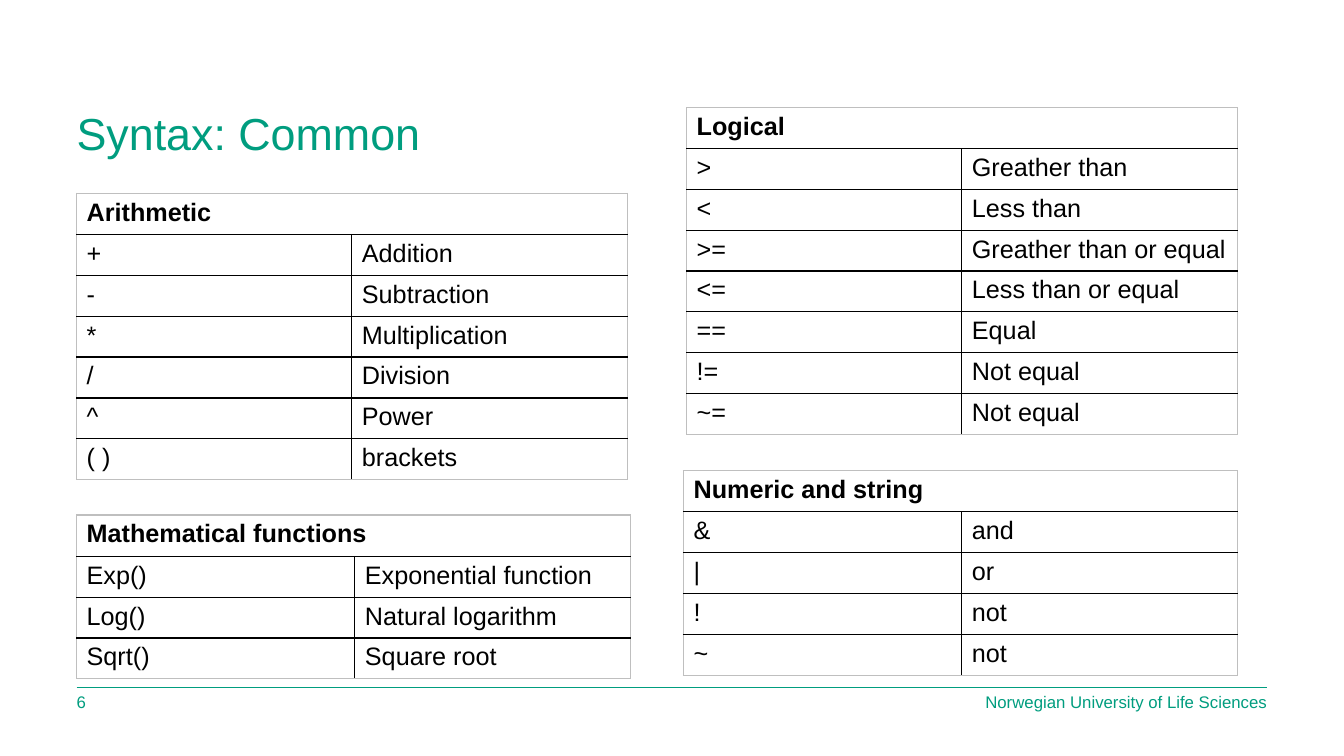
from lxml.etree import SubElement
from pptx import Presentation
from pptx.dml.color import RGBColor
from pptx.enum.shapes import MSO_CONNECTOR
from pptx.enum.text import MSO_ANCHOR, PP_ALIGN
from pptx.oxml.ns import qn
from pptx.util import Inches, Pt

GREEN, BLACK, GREY = "009D7F", "000000", "BFBFBF"


def rgb(hex_text):
    return RGBColor.from_string(hex_text)


def write(tf, text, size=18, color=BLACK, bold=False, align=PP_ALIGN.LEFT):
    p = tf.paragraphs[0]
    p.alignment = align
    r = p.add_run()
    r.text = text
    r.font.name = "Arial"
    r.font.size = Pt(size)
    r.font.bold = bold
    r.font.color.rgb = rgb(color)


def border(cell, side, color):
    ln = SubElement(cell._tc.get_or_add_tcPr(), qn("a:ln" + side), w=str(Pt(1)))
    fill = SubElement(ln, qn("a:solidFill"))
    SubElement(fill, qn("a:srgbClr"), val=color)


class SyntaxSlide:
    def __init__(self, prs):
        self.s = prs.slides.add_slide(prs.slide_layouts[5])

    def frame(self, sp, left, top, width, height):
        sp.left, sp.top = Inches(left), Inches(top)
        sp.width, sp.height = Inches(width), Inches(height)
        tf = sp.text_frame
        tf.margin_left = tf.margin_right = tf.margin_top = tf.margin_bottom = 0
        tf.vertical_anchor = MSO_ANCHOR.MIDDLE
        return tf

    def title(self, text, *box):
        tf = self.frame(self.s.shapes.title, *box)
        tf.word_wrap = False
        write(tf, text, size=32, color=GREEN)

    def label(self, text, *box, **fmt):
        tf = self.frame(self.s.shapes.add_textbox(0, 0, 0, 0), *box)
        tf.word_wrap = True
        write(tf, text, size=12, color=GREEN, **fmt)

    def rule(self, left, right, y):
        line = self.s.shapes.add_connector(
            MSO_CONNECTOR.STRAIGHT, Inches(left), Inches(y), Inches(right), Inches(y))
        line.line.color.rgb = rgb(GREEN)
        line.line.width = Pt(0.5)
        SubElement(line._element.spPr, qn("a:effectLst"))

    def table(self, heading, rows, left, top, cols, heights):
        data = [(heading, "")] + rows
        sp = self.s.shapes.add_table(len(data), 2, Inches(left), Inches(top),
                                     Inches(sum(cols)), Inches(sum(heights)))
        table = sp.table
        table.first_row = table.horz_banding = False
        for column, width in zip(table.columns, cols):
            column.width = Inches(width)
        for row, height in zip(table.rows, heights):
            row.height = Inches(height)
        table.cell(0, 0).merge(table.cell(0, 1))
        last = len(data) - 1
        for i, texts in enumerate(data):
            for j, text in enumerate(texts):
                cell = table.cell(i, j)
                # Grey outer edge, black inner grid
                border(cell, "L", GREY if j == 0 else BLACK)
                border(cell, "R", GREY if j == 1 or i == 0 else BLACK)
                border(cell, "T", GREY if i == 0 else BLACK)
                border(cell, "B", GREY if i == last else BLACK)
                cell.fill.background()
                if text:
                    write(cell.text_frame, text, bold=i == 0)


def even(total, count):
    return [total / count] * count


def main():
    prs = Presentation()
    prs.slide_width, prs.slide_height = Inches(13.33), Inches(7.5)
    slide = SyntaxSlide(prs)

    # Footer
    slide.rule(0.76, 12.57, 6.82)
    slide.label("Norwegian University of Life Sciences", 8.07, 6.85, 4.5, 0.23,
                align=PP_ALIGN.RIGHT)
    slide.label("6", 0.76, 6.85, 3, 0.22)

    # Title
    slide.title("Syntax: Common", 0.76, 1.03, 10.49, 0.58)

    # Operator tables
    equal_cols, wide_first = (2.73, 2.73), (2.76, 2.73)
    slide.table("Arithmetic", [
        ("+", "Addition"), ("-", "Subtraction"), ("*", "Multiplication"),
        ("/", "Division"), ("^", "Power"), ("( )", "brackets"),
    ], 0.76, 1.92, equal_cols, even(2.84, 7))
    slide.table("Numeric and string", [
        ("&", "and"), ("|", "or"), ("!", "not"), ("~", "not"),
    ], 6.78, 4.67, wide_first, even(2.03, 5))
    slide.table("Logical", [
        (">", "Greather than"), ("<", "Less than"),
        (">=", "Greather than or equal"), ("<=", "Less than or equal"),
        ("==", "Equal"), ("!=", "Not equal"), ("~=", "Not equal"),
    ], 6.81, 1.07, equal_cols, even(3.24, 8))

    # Function table
    slide.table("Mathematical functions", [
        ("Exp()", "Exponential function"), ("Log()", "Natural logarithm"),
        ("Sqrt()", "Square root"),
    ], 0.76, 5.11, wide_first, [0.41, 0.41, 0.38, 0.38])

    prs.save("out.pptx")


if __name__ == "__main__":
    main()
